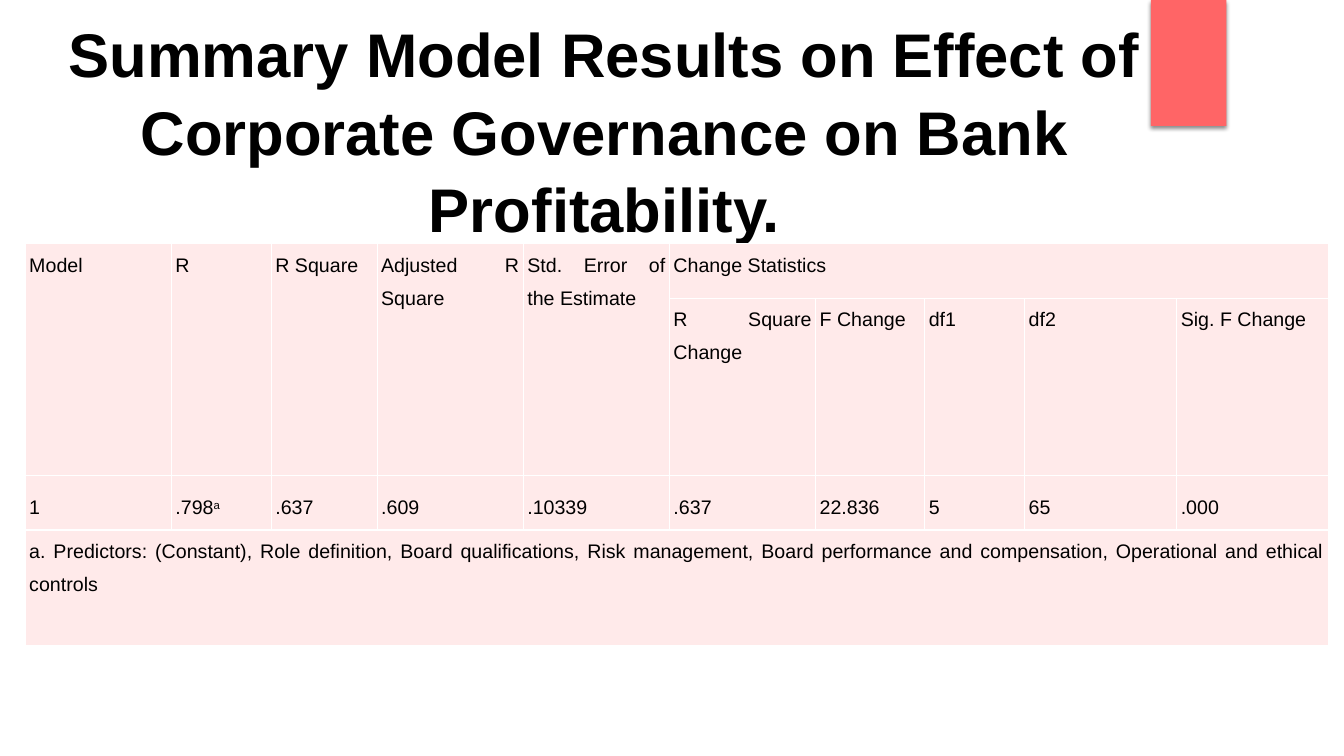
"""Build a slide with the regression summary of governance on bank profitability."""
from dataclasses import dataclass
from typing import Any

import lxml.etree
import pptx
import pptx.dml.color
import pptx.enum.shapes
import pptx.enum.text
import pptx.oxml
import pptx.oxml.ns
import pptx.util

COLOURS = {"ink": "000000", "tab": "FF6566", "cell": "FFEAEA", "border": "FFFFFF"}
GRID_UNIT = pptx.util.Inches(1) / 12
GRID_COLUMNS, GRID_ROWS = 160, 90

ALIGN = pptx.enum.text.PP_ALIGN
ANCHOR = pptx.enum.text.MSO_ANCHOR
MARGINS = dict.fromkeys(("margin_left", "margin_top", "margin_right", "margin_bottom"), 0)
TITLE_FONT = {"name": "Arial", "size": pptx.util.Pt(44), "bold": True}
CELL_FONT = {"name": "Arial", "size": pptx.util.Pt(14), "bold": False}

COLUMN_WIDTHS = [17.4, 11.9, 12.6, 17.4, 17.4, 17.4, 13, 11.9, 18.1, 18.1]
ROW_HEIGHTS = [6.5, 21.1, 6.5, 13.8]


@dataclass(frozen=True)
class Area:
    left: float
    top: float
    width: float
    height: float

    def lengths(self) -> list[int]:
        return [grid(value) for value in (self.left, self.top, self.width, self.height)]


@dataclass(frozen=True)
class Entry:
    row: int
    column: int
    text: str
    rows: int = 1
    columns: int = 1
    superscript: str = ""
    anchor: Any = ANCHOR.TOP


TAB_AREA = Area(137, 0, 9, 15)
TITLE_AREA = Area(8, 2, 128, 26.7)
TABLE_AREA = Area(3, 29, sum(COLUMN_WIDTHS), sum(ROW_HEIGHTS))
TITLE = "Summary Model Results on Effect of Corporate Governance on Bank Profitability."
MODEL_HEADS = ["Model", "R", "R Square", "Adjusted R Square", "Std. Error of the Estimate"]
CHANGE_HEADS = ["R Square Change", "F Change", "df1", "df2", "Sig. F Change"]
RESULTS = ["1", ".798", ".637", ".609", ".10339", ".637", "22.836", "5", "65", ".000"]
FOOTNOTE = (
    "a. Predictors: (Constant), Role definition, Board qualifications, Risk management, "
    "Board performance and compensation, Operational and ethical controls"
)
ENTRIES = [
    *(Entry(0, column, head, rows=2) for column, head in enumerate(MODEL_HEADS)),
    Entry(0, len(MODEL_HEADS), "Change Statistics", columns=len(CHANGE_HEADS)),
    *(Entry(1, column, head) for column, head in enumerate(CHANGE_HEADS, len(MODEL_HEADS))),
    *(
        Entry(2, column, value, superscript="a" if column == 1 else "", anchor=ANCHOR.MIDDLE)
        for column, value in enumerate(RESULTS)
    ),
    Entry(3, 0, FOOTNOTE, columns=len(COLUMN_WIDTHS)),
]


def grid(units: float) -> int:
    return round(units * GRID_UNIT)


def colour(name: str) -> pptx.dml.color.RGBColor:
    return pptx.dml.color.RGBColor.from_string(COLOURS[name])


def apply(target: Any, values: dict[str, Any]) -> None:
    for name, value in values.items():
        setattr(target, name, value)


def paint(fill: Any, name: str) -> None:
    fill.solid()
    fill.fore_color.rgb = colour(name)


def write(para: Any, text: str, font: dict[str, Any]) -> Any:
    span = para.add_run()
    span.text = text
    apply(span.font, font)
    span.font.color.rgb = colour("ink")
    return span


def add_tab(page: Any) -> None:
    tab = page.shapes.add_shape(pptx.enum.shapes.MSO_SHAPE.RECTANGLE, *TAB_AREA.lengths())
    paint(tab.fill, "tab")
    tab.line.fill.background()
    tab.shadow.inherit = False
    effects = tab._element.spPr.find(pptx.oxml.ns.qn("a:effectLst"))
    effects.append(pptx.oxml.parse_xml(
        f'<a:outerShdw {pptx.oxml.ns.nsdecls("a")} blurRad="38100" dist="25400" dir="5400000" '
        f'rotWithShape="0"><a:srgbClr val="{COLOURS["ink"]}"><a:alpha val="45000"/>'
        '</a:srgbClr></a:outerShdw>'
    ))


def add_title(page: Any) -> None:
    box = page.shapes.add_textbox(*TITLE_AREA.lengths())
    apply(box.text_frame, {**MARGINS, "word_wrap": True, "vertical_anchor": ANCHOR.MIDDLE})
    para = box.text_frame.paragraphs[0]
    apply(para, {"alignment": ALIGN.CENTER, "line_spacing": 1.05})
    write(para, TITLE, TITLE_FONT)


def style_cell(cell: Any) -> None:
    apply(cell, MARGINS)
    paint(cell.fill, "cell")
    properties = cell._tc.get_or_add_tcPr()
    for position, side in enumerate("LRTB"):
        properties.insert(position, pptx.oxml.parse_xml(
            f'<a:ln{side} {pptx.oxml.ns.nsdecls("a")} w="12700"><a:solidFill>'
            f'<a:srgbClr val="{COLOURS["border"]}"/></a:solidFill></a:ln{side}>'
        ))


def fill_entry(table: Any, entry: Entry) -> None:
    cell = table.cell(entry.row, entry.column)
    if entry.rows * entry.columns > 1:
        cell.merge(table.cell(entry.row + entry.rows - 1, entry.column + entry.columns - 1))
    cell.vertical_anchor = entry.anchor
    para = cell.text_frame.paragraphs[0]
    apply(para, {"alignment": ALIGN.JUSTIFY, "line_spacing": 1.5})
    for side in ("marL", "marR"):
        para._p.get_or_add_pPr().set(side, str(pptx.util.Inches(0.04)))
    write(para, entry.text, CELL_FONT)
    if entry.superscript:
        span = write(para, entry.superscript, CELL_FONT)
        span._r.get_or_add_rPr().set("baseline", "30000")


def add_results(page: Any) -> None:
    table = page.shapes.add_table(
        len(ROW_HEIGHTS), len(COLUMN_WIDTHS), *TABLE_AREA.lengths()
    ).table
    apply(table, {"first_row": False, "horz_banding": False})
    for column, width in zip(table.columns, COLUMN_WIDTHS):
        column.width = grid(width)
    for row, height in zip(table.rows, ROW_HEIGHTS):
        row.height = grid(height)
    for cell in table.iter_cells():
        style_cell(cell)
    for entry in ENTRIES:
        fill_entry(table, entry)


def main() -> None:
    deck = pptx.Presentation()
    apply(deck, {"slide_width": grid(GRID_COLUMNS), "slide_height": grid(GRID_ROWS)})
    page = deck.slides.add_slide(deck.slide_layouts[6])
    add_tab(page)
    add_title(page)
    add_results(page)
    deck.save("out.pptx")


if __name__ == "__main__":
    main()
